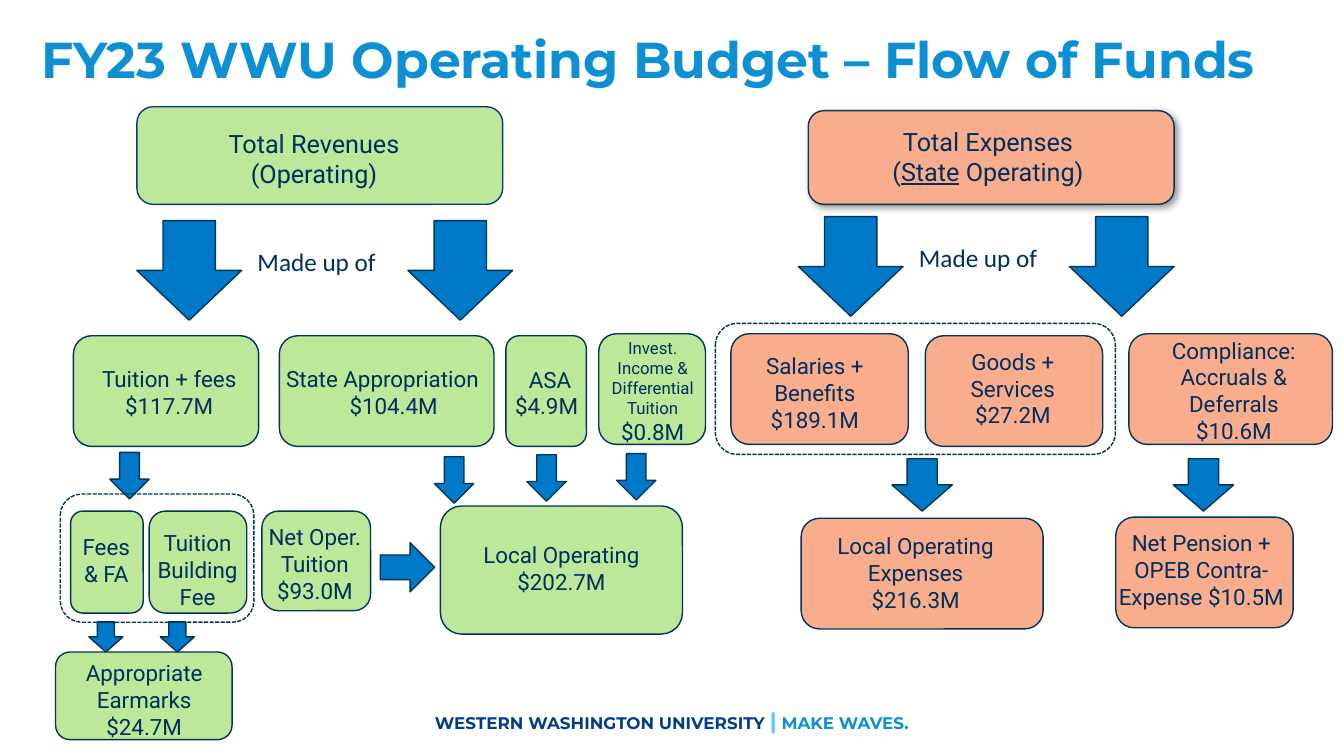
from lxml import etree
from pptx import Presentation
from pptx.dml.color import RGBColor
from pptx.enum.dml import MSO_LINE
from pptx.enum.shapes import MSO_SHAPE
from pptx.enum.text import MSO_ANCHOR, MSO_AUTO_SIZE, PP_ALIGN
from pptx.oxml.ns import qn
from pptx.util import Cm, Pt

ROUNDED = MSO_SHAPE.ROUNDED_RECTANGLE
DOWN_ARROW = MSO_SHAPE.DOWN_ARROW
DASH = MSO_LINE.SQUARE_DOT
LEFT, CENTER = PP_ALIGN.LEFT, PP_ALIGN.CENTER
TOP, MIDDLE = MSO_ANCHOR.TOP, MSO_ANCHOR.MIDDLE
GROW, FIXED = MSO_AUTO_SIZE.SHAPE_TO_FIT_TEXT, MSO_AUTO_SIZE.NONE

GREEN, SALMON, BLUE = "BDE899", "FAAD8C", "0079C8"
NAVY, OUTLINE, UNIVERSITY_BLUE = "002F5E", "003558", "003F87"
WAVE_BLUE, LIGHT_BLUE = "0C8FD3", "63C2FF"

BODY = {"size": Pt(16), "name": "Roboto"}
HEADING = {"size": Pt(18), "name": "Roboto"}
SMALL = {"size": Pt(12), "name": "Roboto"}
CONNECTING = {"size": Pt(18), "name": "Calibri"}
TITLE = {"size": Pt(36), "name": "Montserrat", "bold": True}
FOOTER = {"size": Pt(12), "name": "Montserrat", "bold": True}

REVENUE_BOXES = [
    (1.85, 8.46, 4.67, 2.79), (7.04, 8.46, 5.41, 2.79),
    (12.75, 8.46, 2.03, 2.79), (15.09, 8.41, 2.69, 2.79),
    (1.78, 12.88, 1.83, 2.57), (3.76, 12.88, 2.46, 2.57),
    (6.6, 12.88, 2.74, 2.51), (11.1, 12.75, 6.1, 3.23),
    (1.4, 16.43, 4.45, 2.21),
]
EXPENSE_BOXES = [
    (18.42, 8.41, 4.47, 2.79), (23.32, 8.46, 4.47, 2.79),
    (28.45, 8.41, 5.13, 2.79), (20.19, 13.06, 6.1, 2.79),
    (28.12, 13.03, 4.47, 2.79),
]
DASHED_FRAMES = [(1.52, 12.45, 4.88, 3.23), (18.03, 8.15, 10.08, 3.3)]
ARROWS = [
    (2.77, 11.4, 0.99, 1.17), (10.95, 11.51, 0.99, 1.17),
    (13.28, 11.46, 0.99, 1.17), (15.54, 11.43, 0.99, 1.17),
    (2.24, 15.67, 0.86, 0.76), (4.04, 15.67, 0.86, 0.76),
    (22.48, 11.56, 1.52, 1.32), (29.57, 11.56, 1.52, 1.32),
]
LABELS = [
    ((2.13, 9.07, 4.27, 1.63), ["Tuition + fees", "$117.7M"]),
    ((1.7, 13.31, 1.96, 1.63), ["Fees & FA"]),
    ((3.66, 13.21, 2.64, 2.31), ["Tuition Building Fee"]),
    ((6.4, 13.06, 3.07, 2.31), ["Net Oper.", "Tuition", "$93.0M"]),
    ((11.84, 13.51, 4.62, 1.63), ["Local Operating $202.7M"]),
    ((1.4, 16.48, 4.47, 2.39), ["Appropriate Earmarks", "$24.7M"]),
    ((18.77, 8.76, 3.53, 2.31), ["Salaries + Benefits $189.1M"]),
    ((23.9, 8.64, 3.25, 2.31), ["Goods + Services $27.2M"]),
    ((28.63, 8.36, 4.93, 3.07), ["Compliance: Accruals & Deferrals", "$10.6M"]),
    ((20.7, 13.28, 4.75, 2.31), ["Local Operating Expenses $216.3M"]),
    ((27.81, 13.21, 4.93, 2.31), ["Net Pension + OPEB Contra-Expense $10.5M"]),
]


def color(hex_value):
    return RGBColor.from_string(hex_value)


def set_attributes(target, values):
    for name, value in values.items():
        setattr(target, name, value)


def add_block(shapes, kind, place, fill, outline=OUTLINE):
    shape = shapes.add_shape(kind, *map(Cm, place))
    shape.shadow.inherit = False
    if fill:
        shape.fill.solid()
        shape.fill.fore_color.rgb = color(fill)
    else:
        shape.fill.background()
        shape.line.dash_style = DASH
    shape.line.color.rgb = color(outline)
    shape.line.width = Pt(1)
    return shape


def add_drop_shadow(shape):
    effects = shape._element.spPr.find(qn("a:effectLst"))
    shadow = etree.SubElement(effects, qn("a:outerShdw"), blurRad="63500",
                              dist="38100", dir="2700000", algn="tl", rotWithShape="0")
    shade = etree.SubElement(shadow, qn("a:srgbClr"), val="000000")
    etree.SubElement(shade, qn("a:alpha"), val="40000")


def write_text(text_frame, paragraphs, alignments=(), anchor=TOP, auto_size=GROW):
    set_attributes(text_frame, {"word_wrap": True, "auto_size": auto_size,
                                "vertical_anchor": anchor})
    for index, runs in enumerate(paragraphs):
        paragraph = text_frame.add_paragraph() if index else text_frame.paragraphs[0]
        paragraph.alignment = alignments[index] if alignments else CENTER
        for text, values, hex_value in runs:
            run = paragraph.add_run()
            run.text = text
            set_attributes(run.font, values)
            run.font.color.rgb = color(hex_value)


def add_label(shapes, place, paragraphs, *options):
    text_box = shapes.add_textbox(*map(Cm, place))
    write_text(text_box.text_frame, paragraphs, *options)


def plain(lines, values=BODY):
    return [[(line, values, NAVY)] for line in lines]


def add_made_up_of(slide, left, top):
    shapes = slide.shapes.add_group_shape().shapes
    for offset in (0, 6.83):
        add_block(shapes, DOWN_ARROW, (left + offset, top, 2.64, 2.51), BLUE)
    add_label(shapes, (left + 2.79, top + 0.53, 3.51, 1.02),
              plain(["Made up of"], CONNECTING), [LEFT])


def add_title(slide):
    title = slide.shapes.title
    set_attributes(title, {"left": Cm(-0.13), "top": Cm(0.58),
                           "width": Cm(32.92), "height": Cm(1.8)})
    write_text(title.text_frame,
               [[("FY23 WWU Operating Budget – Flow of Funds", TITLE, WAVE_BLUE)]])


def add_blocks(slide):
    shapes = slide.shapes
    add_block(shapes, ROUNDED, (3.45, 2.69, 9.22, 2.46), GREEN, UNIVERSITY_BLUE)
    add_drop_shadow(add_block(shapes, ROUNDED, (20.37, 2.79, 9.22, 2.36), SALMON))
    for kind, fill, places in (
        (ROUNDED, GREEN, REVENUE_BOXES),
        (ROUNDED, SALMON, EXPENSE_BOXES),
        (DOWN_ARROW, BLUE, ARROWS),
        (ROUNDED, None, DASHED_FRAMES),
    ):
        for place in places:
            add_block(shapes, kind, place, fill)
    tuition_arrow = add_block(shapes, DOWN_ARROW, (9.65, 13.61, 1.24, 1.37), BLUE)
    tuition_arrow.rotation = 270


def add_labels(slide):
    shapes = slide.shapes
    add_label(shapes, (4.04, 3.1, 7.75, 1.8), plain(["Total Revenues (Operating)"], HEADING))
    add_label(shapes, (20.29, 3.05, 9.22, 1.8), [
        [("Total Expenses", HEADING, NAVY)],
        [("(", HEADING, NAVY), ("State", {**HEADING, "underline": True}, NAVY),
         (" Operating)", HEADING, NAVY)],
    ])
    for place, lines in LABELS:
        add_label(shapes, place, plain(lines))
    add_label(shapes, (6.96, 9.07, 5.92, 1.63),
              plain(["State Appropriation", "$104.4M"]), [LEFT, CENTER])
    add_label(shapes, (12.73, 9.09, 2.26, 1.63), plain(["ASA", "$4.9M"]), [CENTER, LEFT])
    add_label(shapes, (14.99, 8.38, 2.92, 3),
              plain(["Invest. Income & Differential Tuition"], SMALL) + plain(["$0.8M"]))


def add_footer(slide):
    add_label(slide.shapes, (0, 17.65, 33.87, 1.02), [[
        ("WESTERN WASHINGTON UNIVERSITY ", FOOTER, UNIVERSITY_BLUE),
        ("|", {**FOOTER, "size": Pt(16)}, LIGHT_BLUE),
        (" ", FOOTER, UNIVERSITY_BLUE),
        ("MAKE WAVES.", FOOTER, WAVE_BLUE),
    ]], (), MIDDLE, FIXED)


def main():
    presentation = Presentation()
    set_attributes(presentation, {"slide_width": Cm(33.87), "slide_height": Cm(19.05)})
    slide = presentation.slides.add_slide(presentation.slide_layouts[5])
    add_title(slide)
    add_blocks(slide)
    add_made_up_of(slide, 3.45, 5.56)
    add_made_up_of(slide, 20.12, 5.46)
    add_labels(slide)
    add_footer(slide)
    presentation.save("out.pptx")


if __name__ == "__main__":
    main()
